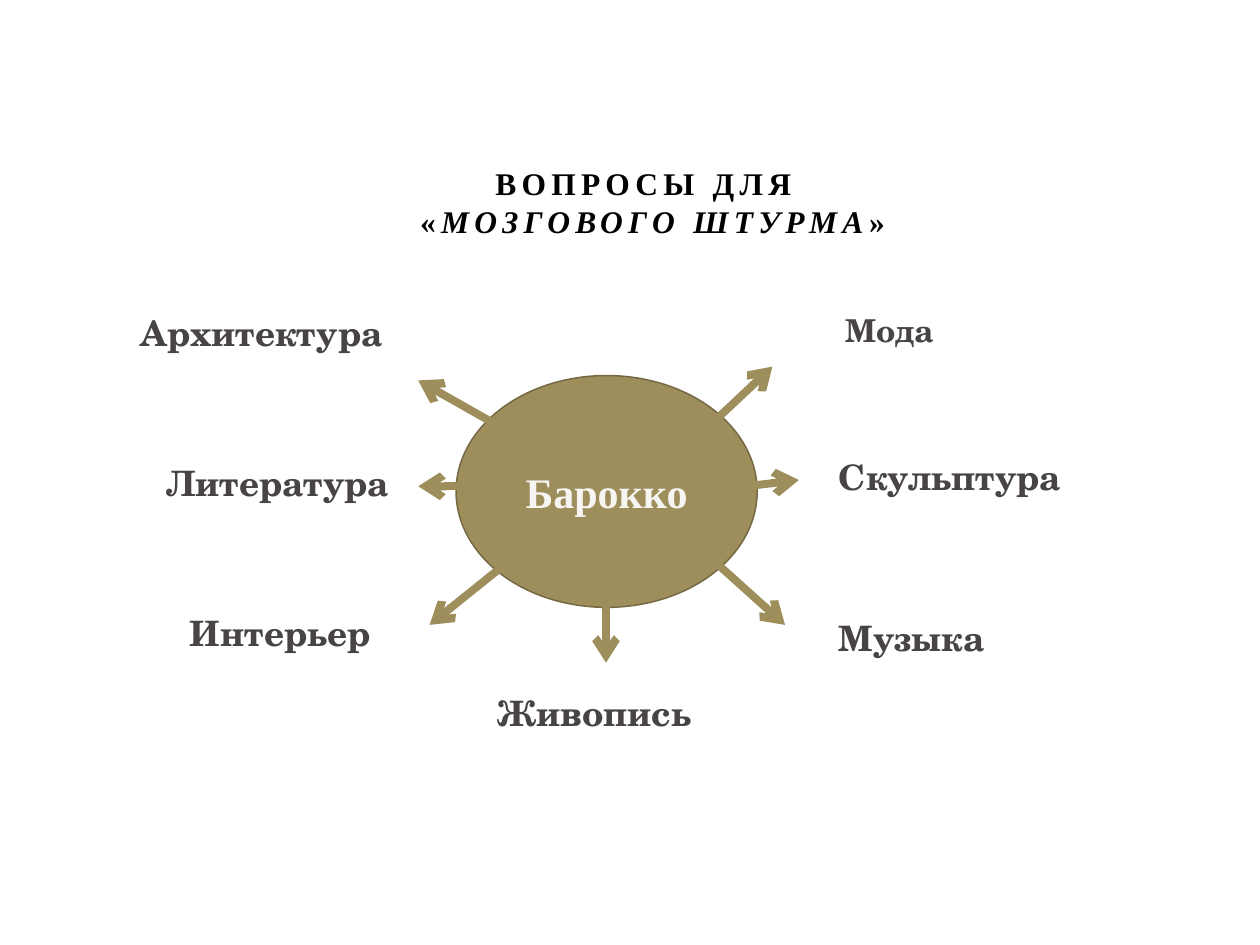
import pptx
import pptx.dml.color
import pptx.enum.shapes
import pptx.enum.text
import pptx.oxml
import pptx.oxml.ns
import pptx.util

Pt = pptx.util.Pt
SERIF = "Times New Roman"
SCHOLA = "TeX Gyre Schola"
GOLD, GOLD_EDGE = "9E8E5C", "756944"
BLACK, GRAY, CREAM = "000000", "474346", "F6F5F1"

TOPICS = [  # text, left, top, width, size
    ("Архитектура", 73.4, 174.2, 200.9, 20),
    ("Мода", 475.9, 174.2, 177.1, 18),
    ("Интерьер", 101.5, 345.6, 136.8, 20),
    ("Музыка", 472.3, 348.5, 156.2, 20),
    ("Живопись", 277.2, 391.7, 184.3, 20),
    ("Литература", 87.8, 259.9, 150.5, 20),
    ("Скульптура", 472.3, 257, 156.2, 20),
]
ARROWS = [  # from x, from y, to x, to y
    (282.2, 241.9, 239, 217.4),
    (404.6, 244.1, 441.4, 209.5),
    (289.4, 321.8, 245.5, 357.1),
    (404.6, 317.5, 448.6, 357.1),
    (396.7, 281.5, 456.5, 274.3),
    (289.4, 277.9, 239, 277.9),
    (346.3, 337.7, 346.3, 378.7),
]


def rgb(color):
    return pptx.dml.color.RGBColor.from_string(color)


def add_text(p, text, size=20, font=SCHOLA, color=GRAY, italic=False, spacing=0):
    r = p.add_run()
    r.text = text
    r.font.size = Pt(size)
    r.font.name = font
    r.font.bold = True
    r.font.italic = italic
    r.font.color.rgb = rgb(color)
    if spacing:
        r.font._element.set("spc", str(spacing * 100))


class MindMap:
    """Holds the slide and draws its elements, in points."""

    def __init__(self, slide):
        self.s = slide

    def title(self, left, top, width, height):
        sp = self.s.shapes.title
        sp.left, sp.top, sp.width, sp.height = map(Pt, (left, top, width, height))
        tf = sp.text_frame
        tf.word_wrap = True
        tf.auto_size = pptx.enum.text.MSO_AUTO_SIZE.NONE
        tf.vertical_anchor = pptx.enum.text.MSO_ANCHOR.BOTTOM
        tf.margin_bottom = Pt(25)
        p = tf.paragraphs[0]
        p.alignment = pptx.enum.text.PP_ALIGN.CENTER
        style = dict(size=18, font=SERIF, color=BLACK, spacing=3)
        add_text(p, "ВОПРОСЫ ДЛЯ ", **style)
        p.add_line_break()
        add_text(p, "«", **style)
        add_text(p, "МОЗГОВОГО ШТУРМА", italic=True, **style)
        add_text(p, "»", **style)

    def label(self, text, left, top, width, size, centered=False, **style):
        sp = self.s.shapes.add_textbox(
            Pt(left), Pt(top), Pt(width), Pt(size * 1.2 + 7.2))
        tf = sp.text_frame
        tf.word_wrap = True
        tf.auto_size = pptx.enum.text.MSO_AUTO_SIZE.SHAPE_TO_FIT_TEXT
        p = tf.paragraphs[0]
        if centered:
            p.alignment = pptx.enum.text.PP_ALIGN.CENTER
        add_text(p, text, size=size, **style)

    def hub(self, left, top, width, height):
        sp = self.s.shapes.add_shape(
            pptx.enum.shapes.MSO_SHAPE.FLOWCHART_CONNECTOR,
            Pt(left), Pt(top), Pt(width), Pt(height))
        sp.shadow.inherit = False
        sp.fill.solid()
        sp.fill.fore_color.rgb = rgb(GOLD)
        sp.line.color.rgb = rgb(GOLD_EDGE)
        sp.line.width = Pt(0.85)

    def arrow(self, *ends):
        c = self.s.shapes.add_connector(
            pptx.enum.shapes.MSO_CONNECTOR.STRAIGHT, *map(Pt, ends))
        c.line.color.rgb = rgb(GOLD)
        c.line.width = Pt(4.5)
        qn = pptx.oxml.ns.qn
        ln = c.line._get_or_add_ln()
        ln.append(ln.makeelement(qn("a:tailEnd"), {"type": "arrow"}))
        ln.addnext(ln.makeelement(qn("a:effectLst"), {}))


def main():
    prs = pptx.Presentation()
    prs.slide_width, prs.slide_height = Pt(720), Pt(540)
    s = MindMap(prs.slides.add_slide(prs.slide_layouts[5]))
    s.title(170.6, 88.6, 404.6, 73.4)
    for topic in TOPICS:
        s.label(*topic)
    s.hub(260.6, 214.6, 172.1, 132.5)
    s.label("Барокко", 278.6, 262.8, 136.1, 24, centered=True,
            font=SERIF, color=CREAM)
    for ends in ARROWS:
        s.arrow(*ends)
    prs.save("out.pptx")


if __name__ == "__main__":
    main()
